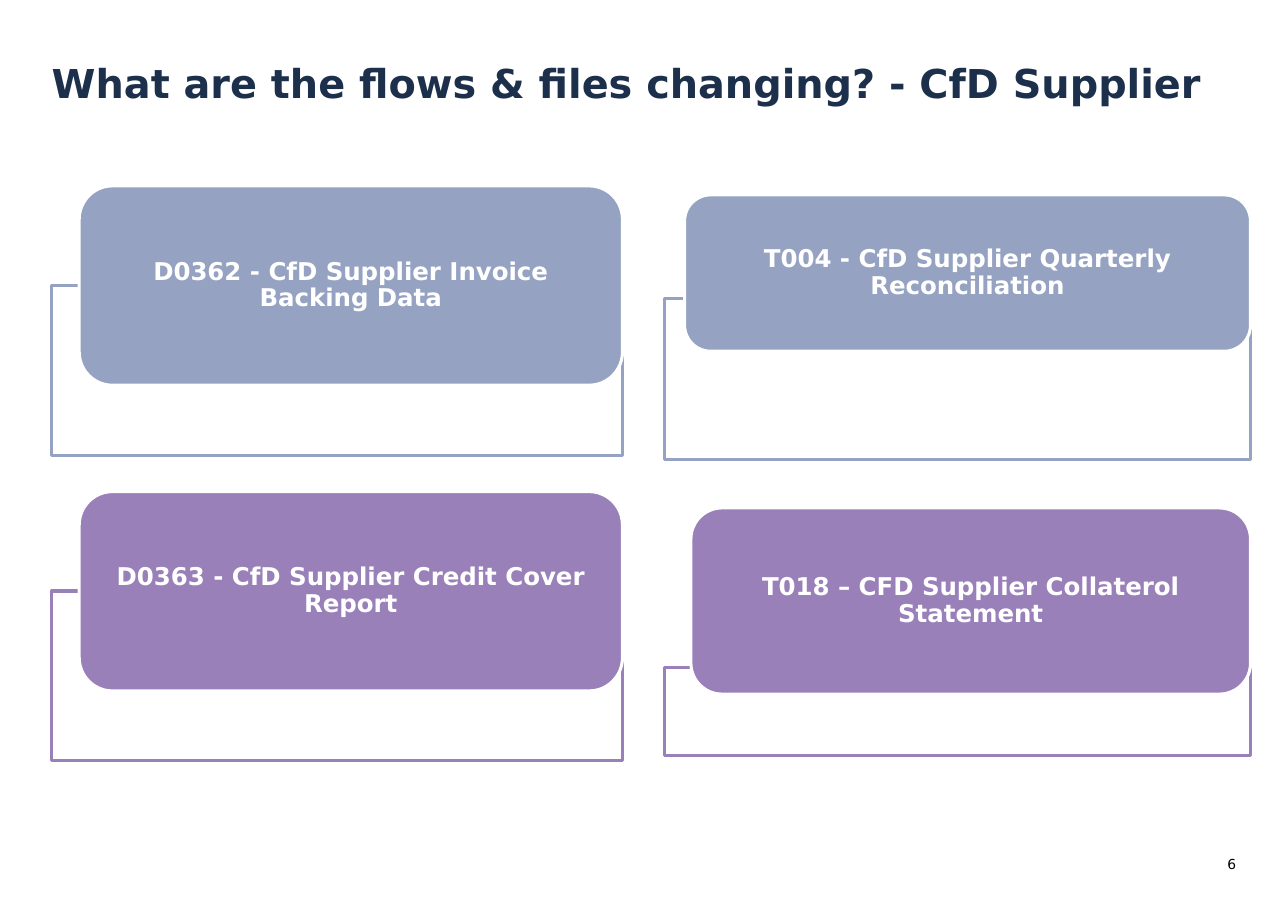
from dataclasses import dataclass

from pptx import Presentation
from pptx.dml.color import RGBColor
from pptx.enum.shapes import MSO_SHAPE
from pptx.enum.text import MSO_ANCHOR, MSO_AUTO_SIZE, PP_ALIGN
from pptx.util import Pt


@dataclass(frozen=True)
class Theme:
    font: str = "DejaVu Sans"
    navy: str = "1C2F4B"
    blue: str = "95A2C2"
    purple: str = "9980B9"
    white: str = "FFFFFF"
    black: str = "000000"
    head: int = 26
    body: int = 16
    small: int = 9
    line: int = 2


THEME = Theme()

# text, colour, box (left, top, width, height), indent, label height, tray height
CARDS = [
    ("D0362 - CfD Supplier Invoice Backing Data", THEME.blue,
     (33.8, 121.5, 373, 176), 18, 130.3, 111),
    ("D0363 - CfD Supplier Credit Cover Report", THEME.purple,
     (33.8, 321.3, 373, 176), 18, 130.3, 111),
    ("T004 - CfD Supplier Quarterly Reconciliation", THEME.blue,
     (434.2, 127.4, 383, 172.8), 13.2, 102.2, 105.1),
    ("T018 – CFD Supplier Collaterol Statement", THEME.purple,
     (434.2, 332, 383, 162), 17.3, 121.7, 57.6),
]


def write(shape, text, size=THEME.body, color=THEME.white, bold=False,
          align=PP_ALIGN.LEFT, anchor=MSO_ANCHOR.TOP, inset=0, spacing=1.0):
    frame = shape.text_frame
    frame.word_wrap = True
    frame.auto_size = MSO_AUTO_SIZE.NONE
    frame.vertical_anchor = anchor
    frame.margin_left = frame.margin_right = Pt(inset)
    frame.margin_top = frame.margin_bottom = 0
    line = frame.paragraphs[0]
    line.alignment = align
    line.line_spacing = spacing
    line.space_before = Pt(0)
    run = line.add_run()
    run.text = text
    run.font.name = THEME.font
    run.font.size = Pt(size)
    run.font.bold = bold
    run.font.color.rgb = RGBColor.from_string(color)


def add_block(slide, kind, box, fill, edge):
    block = slide.shapes.add_shape(kind, *map(Pt, box))
    block.shadow.inherit = False
    block.fill.solid()
    block.fill.fore_color.rgb = RGBColor.from_string(fill)
    block.line.color.rgb = RGBColor.from_string(edge)
    block.line.width = Pt(THEME.line)
    return block


def add_card(slide, text, color, box, indent, label_high, tray_high):
    """Draw a tray at the foot of the box and a label over its top right."""
    left, top, width, height = box
    tray = (left, top + height - tray_high, width, tray_high)
    add_block(slide, MSO_SHAPE.RECTANGLE, tray, THEME.white, color)
    area = (left + indent, top, width - indent, label_high)
    label = add_block(slide, MSO_SHAPE.ROUNDED_RECTANGLE, area, color, THEME.white)
    write(label, text, bold=True, align=PP_ALIGN.CENTER,
          anchor=MSO_ANCHOR.MIDDLE, inset=10, spacing=0.9)


def add_title(slide, text, box):
    title = slide.shapes.title
    title.left, title.top, title.width, title.height = map(Pt, box)
    write(title, text, size=THEME.head, color=THEME.navy, bold=True)


def add_number(slide, text, box):
    number = slide.shapes.add_textbox(*map(Pt, box))
    write(number, text, size=THEME.small, color=THEME.black, align=PP_ALIGN.RIGHT)


def main():
    deck = Presentation()
    deck.slide_width, deck.slide_height = Pt(841.68), Pt(595.44)
    slide = deck.slides.add_slide(deck.slide_layouts.get_by_name("Title Only"))
    add_title(slide, "What are the flows & files changing? - CfD Supplier",
              (33.8, 38.2, 774, 33.8))
    for card in CARDS:
        add_card(slide, *card)
    add_number(slide, "6", (779.8, 559.4, 28, 14.4))
    deck.save("out.pptx")


if __name__ == "__main__":
    main()
